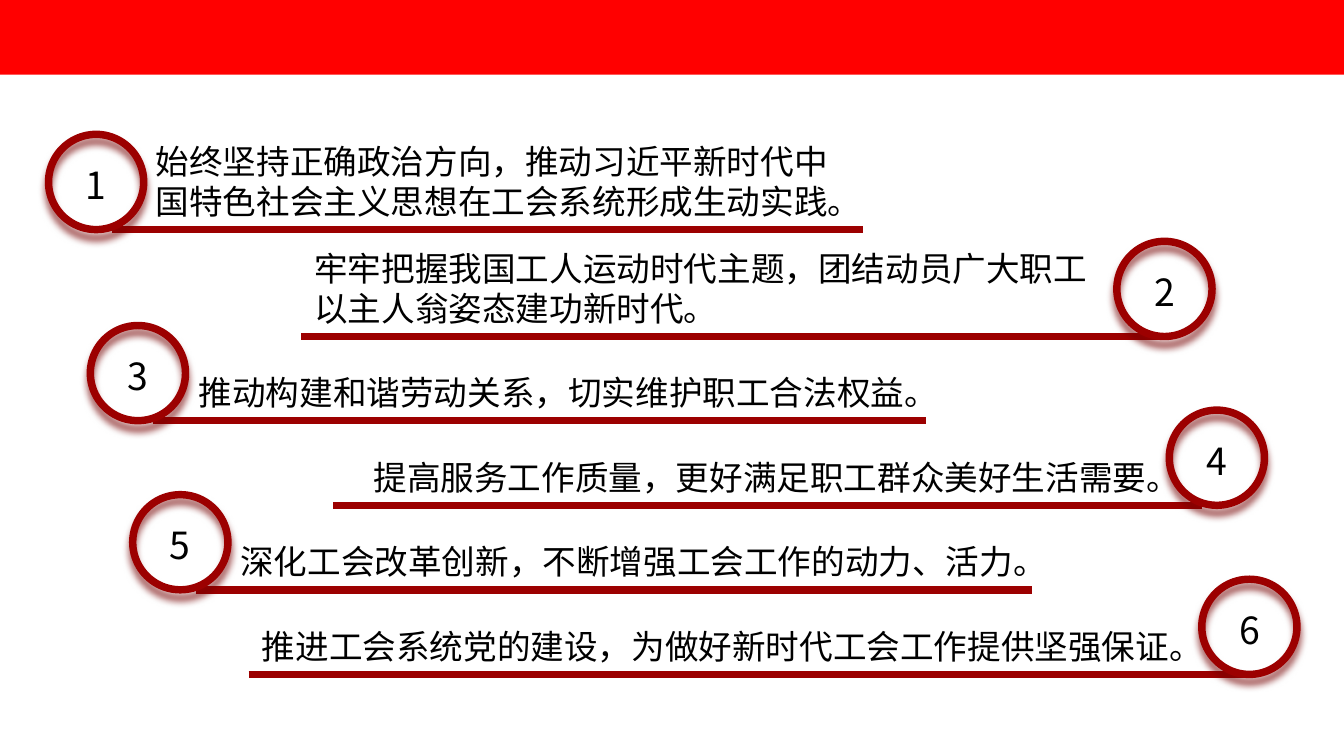
from collections import namedtuple

from lxml.etree import SubElement
from pptx import Presentation
from pptx.dml.color import RGBColor
from pptx.enum.shapes import MSO_CONNECTOR as Connector, MSO_SHAPE as Shape
from pptx.enum.text import MSO_ANCHOR as Anchor, PP_ALIGN as Align
from pptx.oxml.ns import qn
from pptx.util import Pt

RED = "FF0000"
DARK_RED = "9C0000"
SHADOW = "750000"
BLACK = "000000"
CIRCLE = 51
ONE_LINE_OFFSET = 21.4
NUMBER_OFFSET = 11.4
ROW_PITCH = 45.3
THIRD_TOP = 174.4

Box = namedtuple("Box", "left top width height")
Task = namedtuple("Task", "circle_left circle_top line_left line_right text_left text_width lines text")

TASKS = [
    Task(26, 72, 59.8, 462.2, 76.3, 385.2, 2,
         "始终坚持正确政治方向，推动习近平新时代中国特色社会主义思想在工会系统形成生动实践。"),
    Task(598.3, 129.3, 161.3, 623.5, 161.3, 437, 2,
         "牢牢把握我国工人运动时代主题，团结动员广大职工以主人翁姿态建功新时代。"),
    Task(48.4, THIRD_TOP, 82.1, 496.1, 99.4, 408.2, 1,
         "推动构建和谐劳动关系，切实维护职工合法权益。"),
    Task(626.4, THIRD_TOP + ROW_PITCH, 178.6, 643.7, 193, 450.7, 1,
         "提高服务工作质量，更好满足职工群众美好生活需要。"),
    Task(71.1, THIRD_TOP + 2 * ROW_PITCH, 105.1, 553, 121.7, 566.6, 1,
         "深化工会改革创新，不断增强工会工作的动力、活力。"),
    Task(643.8, THIRD_TOP + 3 * ROW_PITCH, 133.2, 668.9, 133.2, 566.6, 1,
         "推进工会系统党的建设，为做好新时代工会工作提供坚强保证。"),
]


def color(value):
    return RGBColor.from_string(value)


def points(box):
    return [Pt(length) for length in box]


def add_text(page, box, text, size=18, font="Arial", align=Align.LEFT):
    frame = page.shapes.add_textbox(*points(box)).text_frame
    frame.word_wrap = True
    frame.vertical_anchor = Anchor.TOP
    para = frame.paragraphs[0]
    para.alignment = align
    span = para.add_run()
    span.text = text
    span.font.size = Pt(size)
    span.font.name = font
    span.font.color.rgb = color(BLACK)


def add_banner(page, box):
    banner = page.shapes.add_shape(Shape.RECTANGLE, *points(box))
    banner.shadow.inherit = False
    banner.fill.solid()
    banner.fill.fore_color.rgb = color(RED)
    banner.line.fill.background()


def add_underline(page, left, right, y):
    line = page.shapes.add_connector(Connector.STRAIGHT, Pt(left), Pt(y), Pt(right), Pt(y))
    line.line.color.rgb = color(DARK_RED)
    line.line.width = Pt(4)
    SubElement(line._element.spPr, qn("a:effectLst"))


def add_glow(shape):
    shape.shadow.inherit = False
    effects = shape._element.spPr.find(qn("a:effectLst"))
    shadow = SubElement(effects, qn("a:outerShdw"), blurRad=str(Pt(4)), dist=str(Pt(4)),
                        dir="5400000", algn="t", rotWithShape="0")
    tint = SubElement(shadow, qn("a:srgbClr"), val=SHADOW)
    SubElement(tint, qn("a:alpha"), val="66000")


def add_badge(page, box, number):
    circle = page.shapes.add_shape(Shape.OVAL, *points(box))
    circle.fill.background()
    circle.line.color.rgb = color(DARK_RED)
    circle.line.width = Pt(4)
    add_glow(circle)
    label = Box(box.left, box.top + NUMBER_OFFSET, box.width, 31.5)
    add_text(page, label, str(number), size=20, font="Noto Sans CJK SC", align=Align.CENTER)


def add_task(page, number, task):
    offset, height = (0, 51) if task.lines == 2 else (ONE_LINE_OFFSET, 29)
    add_underline(page, task.line_left, task.line_right, task.circle_top + CIRCLE)
    add_text(page, Box(task.text_left, task.circle_top + offset, task.text_width, height), task.text)
    add_badge(page, Box(task.circle_left, task.circle_top, CIRCLE, CIRCLE), number)


def main():
    deck = Presentation()
    deck.slide_width, deck.slide_height = Pt(720), Pt(405)
    page = deck.slides.add_slide(deck.slide_layouts[6])
    add_banner(page, Box(0, 0, 720, 40))
    for number, task in enumerate(TASKS, start=1):
        add_task(page, number, task)
    deck.save("out.pptx")


if __name__ == "__main__":
    main()
